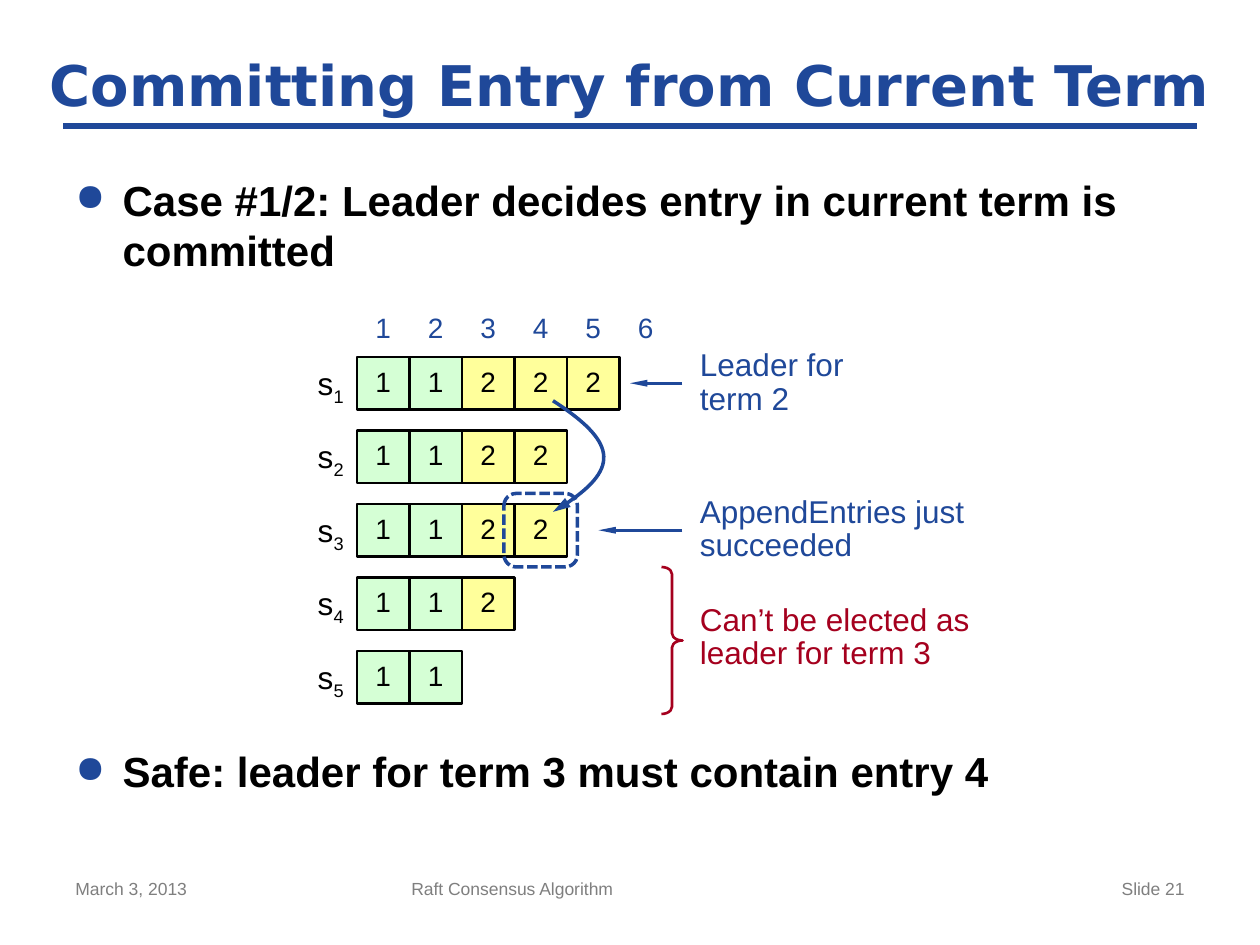
"""Build a slide on committing a log entry from the current term."""
from lxml.etree import SubElement
from pptx import Presentation
from pptx.dml.color import RGBColor
from pptx.enum.dml import MSO_LINE
from pptx.enum.shapes import MSO_CONNECTOR, MSO_SHAPE
from pptx.enum.text import MSO_ANCHOR, MSO_AUTO_SIZE, PP_ALIGN
from pptx.oxml.ns import qn
from pptx.util import Pt

COLORS = {
    "blue": "1F4899",
    "red": "A5001E",
    "black": "000000",
    "gray": "7F7F7F",
    "term 1": "D5FFD5",
    "term 2": "FFFF9B",
}
LOGS = ["11222", "1122", "1122", "112", "11"]
INDEX_COUNT = 6
CELL = 30
ROW_STEP = 42
GRID_LEFT = 204
GRID_TOP = 204
NOTE_LEFT = 400


def rgb(name):
    return RGBColor.from_string(COLORS[name])


def format_paragraph(paragraph, size, color, align=PP_ALIGN.LEFT, font="Arial", bold=False):
    paragraph.alignment = align
    paragraph.font.name = font
    paragraph.font.size = Pt(size)
    paragraph.font.bold = bold
    paragraph.font.color.rgb = rgb(color)


def clear_insets(frame):
    frame.margin_left = frame.margin_top = frame.margin_right = frame.margin_bottom = 0


def style_line(shape, color, width):
    shape.line.color.rgb = rgb(color)
    shape.line.width = Pt(width)


def add_arrowhead(shape, width):
    line = shape.line._get_or_add_ln()
    SubElement(line, qn("a:tailEnd"), type="triangle", w=width, len="lg")


def add_text(slide, box, text, size, color, align=PP_ALIGN.LEFT, inset=True, spacing=None):
    frame = slide.shapes.add_textbox(*map(Pt, box)).text_frame
    frame.word_wrap = True
    if not inset:
        clear_insets(frame)
    paragraph = frame.paragraphs[0]
    paragraph.text = text
    format_paragraph(paragraph, size, color, align)
    if spacing:
        paragraph.line_spacing = Pt(spacing)
    return paragraph


def add_shape(slide, kind, box, color, width, fill=None):
    shape = slide.shapes.add_shape(kind, *map(Pt, box))
    shape.shadow.inherit = False
    style_line(shape, color, width)
    if fill:
        shape.fill.solid()
        shape.fill.fore_color.rgb = rgb(fill)
    else:
        shape.fill.background()
    return shape


def add_line(slide, start, end, width):
    line = slide.shapes.add_connector(MSO_CONNECTOR.STRAIGHT, *map(Pt, start + end))
    style_line(line, "blue", width)
    SubElement(line._element.spPr, qn("a:effectLst"))
    return line


def add_title(slide, text):
    title = slide.shapes.title
    title.left, title.top, title.width, title.height = map(Pt, (18, 24, 684, 48))
    frame = title.text_frame
    frame.text = text
    frame.word_wrap = True
    frame.auto_size = MSO_AUTO_SIZE.NONE
    frame.vertical_anchor = MSO_ANCHOR.MIDDLE
    format_paragraph(frame.paragraphs[0], 32, "blue", PP_ALIGN.CENTER, "DejaVu Sans", True)
    add_line(slide, (36, 72), (684, 72), 4)


def add_bullets(slide, items):
    frame = slide.shapes.add_textbox(Pt(36), Pt(96), Pt(648), Pt(386)).text_frame
    frame.word_wrap = True
    for number, (text, space_before) in enumerate(items):
        paragraph = frame.add_paragraph() if number else frame.paragraphs[0]
        paragraph.text = text
        format_paragraph(paragraph, 24, "black", bold=True)
        paragraph.space_before = Pt(space_before)
        properties = paragraph._p.get_or_add_pPr()
        properties.set("marL", str(Pt(27)))
        properties.set("indent", str(-Pt(27)))
        bullet_color = properties.makeelement(qn("a:buClr"))
        SubElement(bullet_color, qn("a:srgbClr"), val=COLORS["blue"])
        bullet_size = properties.makeelement(qn("a:buSzPct"), val="90000")
        bullet = properties.makeelement(qn("a:buChar"), char="●")
        defaults = properties.find(qn("a:defRPr"))
        for element in (bullet_color, bullet_size, bullet):
            defaults.addprevious(element)


def add_cell(slide, left, top, term):
    cell = add_shape(slide, MSO_SHAPE.RECTANGLE, (left, top, CELL, CELL), "black", 1.5, f"term {term}")
    frame = cell.text_frame
    clear_insets(frame)
    frame.vertical_anchor = MSO_ANCHOR.MIDDLE
    paragraph = frame.paragraphs[0]
    paragraph.text = term
    paragraph.line_spacing = Pt(17)
    format_paragraph(paragraph, 16, "black", PP_ALIGN.CENTER)


def add_logs(slide):
    for index in range(INDEX_COUNT):
        box = (GRID_LEFT + index * CELL, 174, CELL, 26.6)
        add_text(slide, box, str(index + 1), 16, "blue", PP_ALIGN.CENTER)
    for row, log in enumerate(LOGS):
        top = GRID_TOP + row * ROW_STEP
        label_box = (GRID_LEFT - CELL, top + 4, CELL, 21.6)
        label = add_text(slide, label_box, "s", 18, "black", PP_ALIGN.CENTER, inset=False)
        subscript = label.add_run()
        subscript.text = str(row + 1)
        subscript.font._element.set("baseline", "-25000")
        for column, term in enumerate(log):
            add_cell(slide, GRID_LEFT + column * CELL, top, term)


def add_replication_curve(slide):
    builder = slide.shapes.build_freeform(Pt(316), Pt(229))
    points = [(351.5, 252), (355.5, 269.5), (316, 292.5)]
    builder.add_line_segments([(Pt(x), Pt(y)) for x, y in points], close=False)
    curve = builder.convert_to_shape()
    curve.shadow.inherit = False
    curve.fill.background()
    style_line(curve, "blue", 2)
    add_arrowhead(curve, "med")
    curve.width = Pt(28.4)
    outline = next(curve._element.iter(qn("a:path")))
    outline.set("w", str(curve.width))
    bezier = SubElement(outline, qn("a:cubicBezTo"))
    for segment in outline.findall(qn("a:lnTo")):
        bezier.append(segment[0])
        outline.remove(segment)


def add_notes_beside_logs(slide):
    notes = [
        ("Leader for\nterm 2", 200, 102, "blue"),
        ("AppendEntries just\nsucceeded", 283.5, 200, "blue"),
        ("Can’t be elected as\nleader for term 3", 345.5, 200, "red"),
    ]
    for text, top, width, color in notes:
        add_text(slide, (NOTE_LEFT, top, width, 38), text, 18, color, inset=False, spacing=19)
    for tip, row in ((360, 0), (342, 2)):
        y = GRID_TOP + row * ROW_STEP + CELL / 2
        add_arrowhead(add_line(slide, (390, y), (tip, y), 1.5), "sm")
    highlight = add_shape(slide, MSO_SHAPE.ROUNDED_RECTANGLE, (288, 282, 42, 42), "blue", 2)
    highlight.line.dash_style = MSO_LINE.SQUARE_DOT
    brace = add_shape(slide, MSO_SHAPE.RIGHT_BRACE, (378, 324, 12, 84), "red", 1.5)
    brace.adjustments[0] = 0.34


def add_footer(slide):
    add_text(slide, (36, 498, 168, 31), "March 3, 2013", 10, "gray")
    add_text(slide, (228, 498, 270, 31), "Raft Consensus Algorithm", 10, "gray")
    add_text(slide, (516, 498, 168, 31), "Slide 21", 10, "gray", PP_ALIGN.RIGHT)


def main():
    presentation = Presentation()
    presentation.slide_width, presentation.slide_height = Pt(720), Pt(540)
    slide = presentation.slides.add_slide(presentation.slide_layouts[5])
    add_title(slide, "Committing Entry from Current Term")
    add_bullets(slide, [
        ("Case #1/2: Leader decides entry in current term is committed", 12),
        ("Safe: leader for term 3 must contain entry 4", 269),
    ])
    add_logs(slide)
    add_notes_beside_logs(slide)
    add_replication_curve(slide)
    add_footer(slide)
    presentation.save("out.pptx")


if __name__ == "__main__":
    main()
